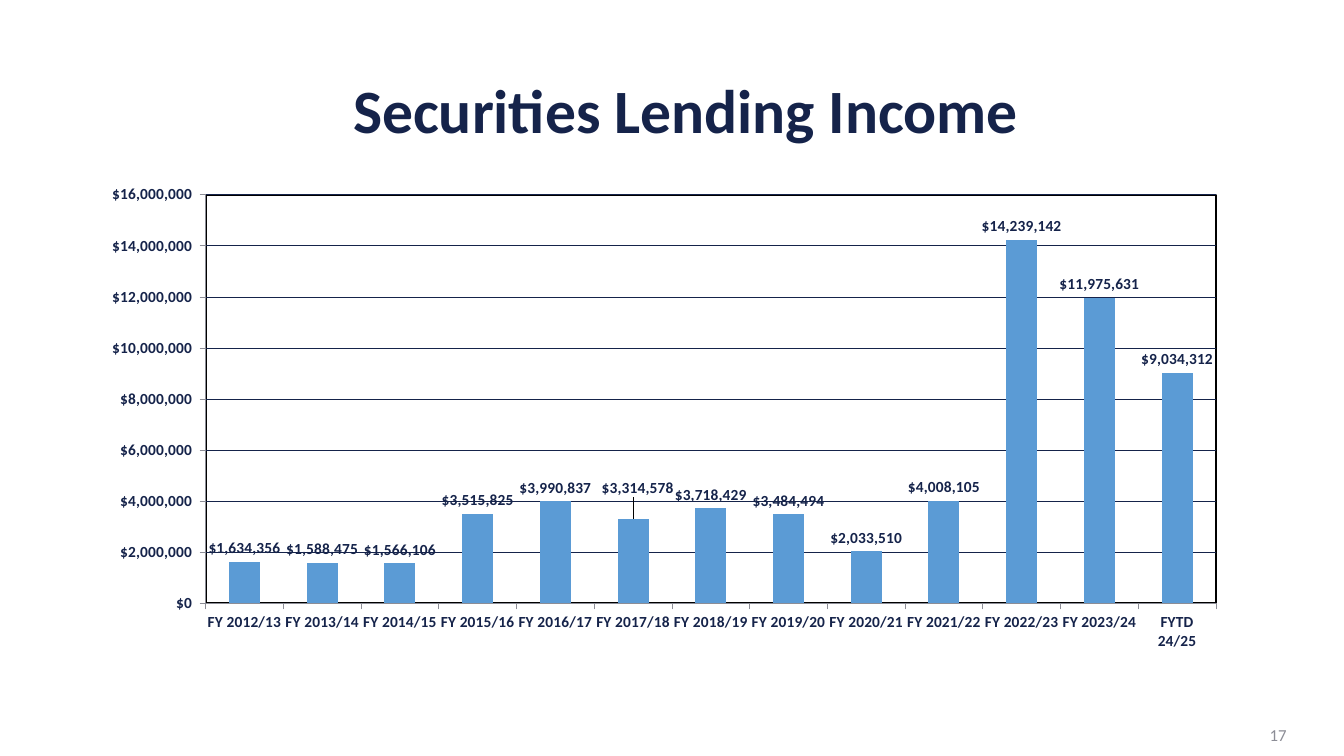
from lxml import etree
from pptx import Presentation
from pptx.chart.data import CategoryChartData
from pptx.dml.color import RGBColor
from pptx.enum.chart import XL_CHART_TYPE, XL_LABEL_POSITION, XL_TICK_MARK
from pptx.enum.text import MSO_ANCHOR, PP_ALIGN
from pptx.oxml import parse_xml
from pptx.oxml.ns import nsdecls, qn
from pptx.util import Pt

PX = 9144
NAVY = RGBColor(0x15, 0x23, 0x4A)
GREY = RGBColor(0x8C, 0x8D, 0x96)
BLUE = RGBColor(0x5B, 0x9B, 0xD5)
BLACK = RGBColor(0, 0, 0)
FACE = "Calibri"
COLUMN = XL_CHART_TYPE.COLUMN_CLUSTERED
ABOVE = XL_LABEL_POSITION.OUTSIDE_END
TICK_OUT = XL_TICK_MARK.OUTSIDE
NO_TICK = XL_TICK_MARK.NONE
CENTER, RIGHT = PP_ALIGN.CENTER, PP_ALIGN.RIGHT
MIDDLE = MSO_ANCHOR.MIDDLE
MONEY = '"$"#,##0'


def style(font, size, color=NAVY, bold=True):
    font.name = FACE
    font.size = Pt(size)
    font.bold = bold
    font.color.rgb = color


def put(shape, text, box, size, align, color=NAVY, bold=True, space=1.0):
    shape.left, shape.top, shape.width, shape.height = [n * PX for n in box]
    frame = shape.text_frame
    frame.word_wrap = True
    frame.vertical_anchor = MIDDLE
    para = frame.paragraphs[0]
    para.alignment = align
    para.line_spacing = space
    run = para.add_run()
    run.text = text
    style(run.font, size, color, bold)


deck = Presentation()
deck.slide_width, deck.slide_height = 1333 * PX, 750 * PX
slide = deck.slides.add_slide(deck.slide_layouts[5])

put(slide.shapes.title, "Securities Lending Income ", (246, 64, 883, 97),
    44, CENTER, space=0.9)

data = CategoryChartData(number_format=MONEY)
data.categories = [f"FY 20{y}/{y + 1}" for y in range(12, 24)] + ["FYTD 24/25"]
data.add_series("Series 1", (
    1634356, 1588475, 1566106, 3515825, 3990837, 3314578, 3718429,
    3484494, 2033510, 4008105, 14239142, 11975631, 9034312))
chart = slide.shapes.add_chart(
    COLUMN, 90 * PX, 175 * PX, 1140 * PX, 481 * PX, data).chart
style(chart.font, 18, bold=False)
chart.has_legend = False
chart.has_title = False

for axis in (chart.category_axis, chart.value_axis):
    axis.major_tick_mark = TICK_OUT
    axis.minor_tick_mark = NO_TICK
    axis.format.line.color.rgb = GREY
    axis.format.line.width = Pt(0.5)
    style(axis.tick_labels.font, 11)

scale = chart.value_axis
scale.minimum_scale, scale.maximum_scale = 0, 16000000
scale.major_unit = 2000000
scale.tick_labels.number_format = '"$"#,##0_);[Red]\\("$"#,##0\\)'
scale.tick_labels.number_format_is_linked = False
scale.has_major_gridlines = True
scale.major_gridlines.format.line.color.rgb = NAVY
scale.major_gridlines.format.line.width = Pt(0.5)

plot = chart.plots[0]
plot.gap_width = 150
plot.vary_by_categories = False
bars = plot.series[0]
bars.format.fill.solid()
bars.format.fill.fore_color.rgb = BLUE
tags = bars.data_labels
tags.show_value = True
tags.position = ABOVE
tags.number_format = MONEY
tags.number_format_is_linked = False
style(tags.font, 11)

tag = bars.points[5].data_label
style(tag.font, 11)
tag.position = ABOVE
mark = tags._element.find(qn("c:dLbl"))
shift = parse_xml(
    f'<c:layout {nsdecls("c")}><c:manualLayout>'
    '<c:x val="0.004"/><c:y val="-0.035"/></c:manualLayout></c:layout>')
mark.find(qn("c:idx")).addnext(shift)
form = etree.Element(qn("c:numFmt"), formatCode=MONEY, sourceLinked="0")
shift.addnext(form)

area = chart._chartSpace.chart.plotArea
for old in area.findall(qn("c:layout")):
    area.remove(old)
area.insert(0, parse_xml(
    f'<c:layout {nsdecls("c")}><c:manualLayout>'
    '<c:layoutTarget val="inner"/><c:xMode val="edge"/><c:yMode val="edge"/>'
    '<c:x val="0.1"/><c:y val="0.038"/><c:w val="0.879"/><c:h val="0.843"/>'
    '</c:manualLayout></c:layout>'))
area.append(parse_xml(
    f'<c:spPr {nsdecls("c", "a")}><a:noFill/><a:ln w="{Pt(1.5)}"><a:solidFill>'
    f'<a:srgbClr val="{BLACK}"/></a:solidFill></a:ln></c:spPr>'))

put(slide.shapes.add_textbox(0, 0, PX, PX), "17", (986, 709, 300, 40),
    12, RIGHT, color=GREY, bold=False)

deck.save("out.pptx")
